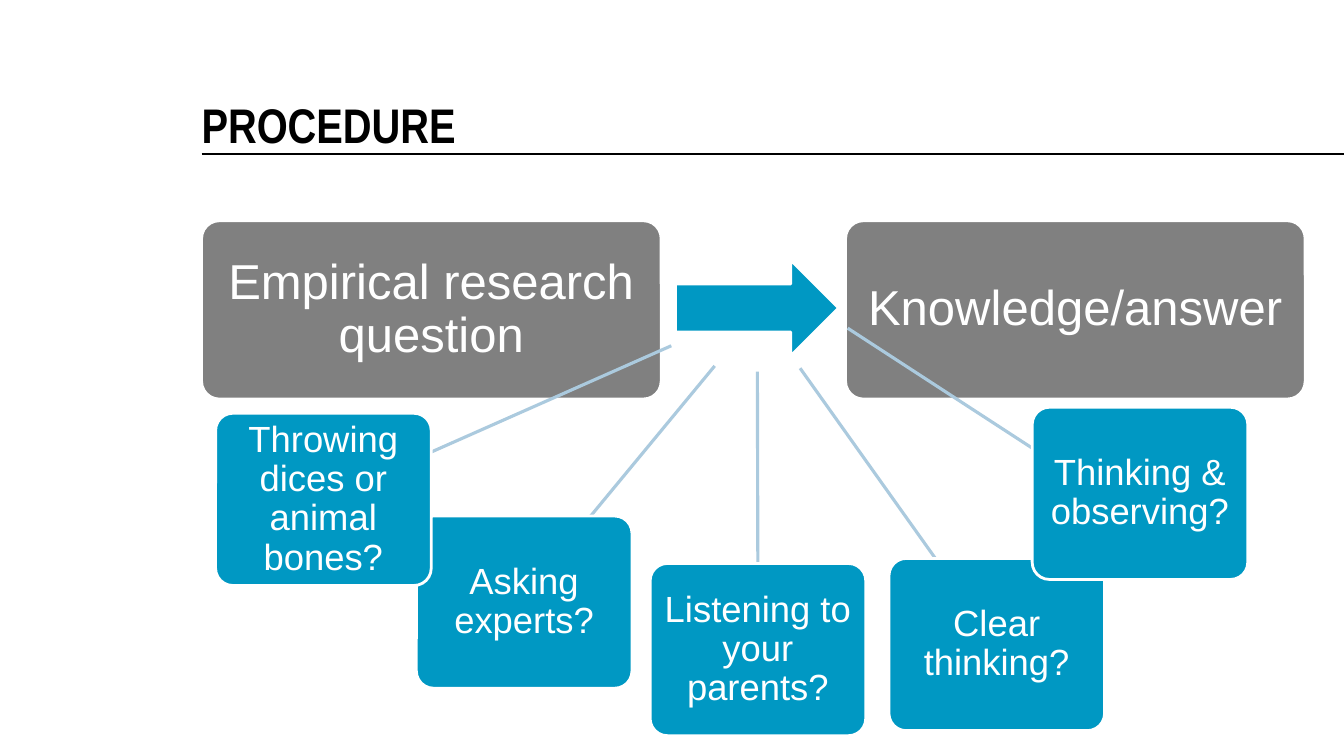
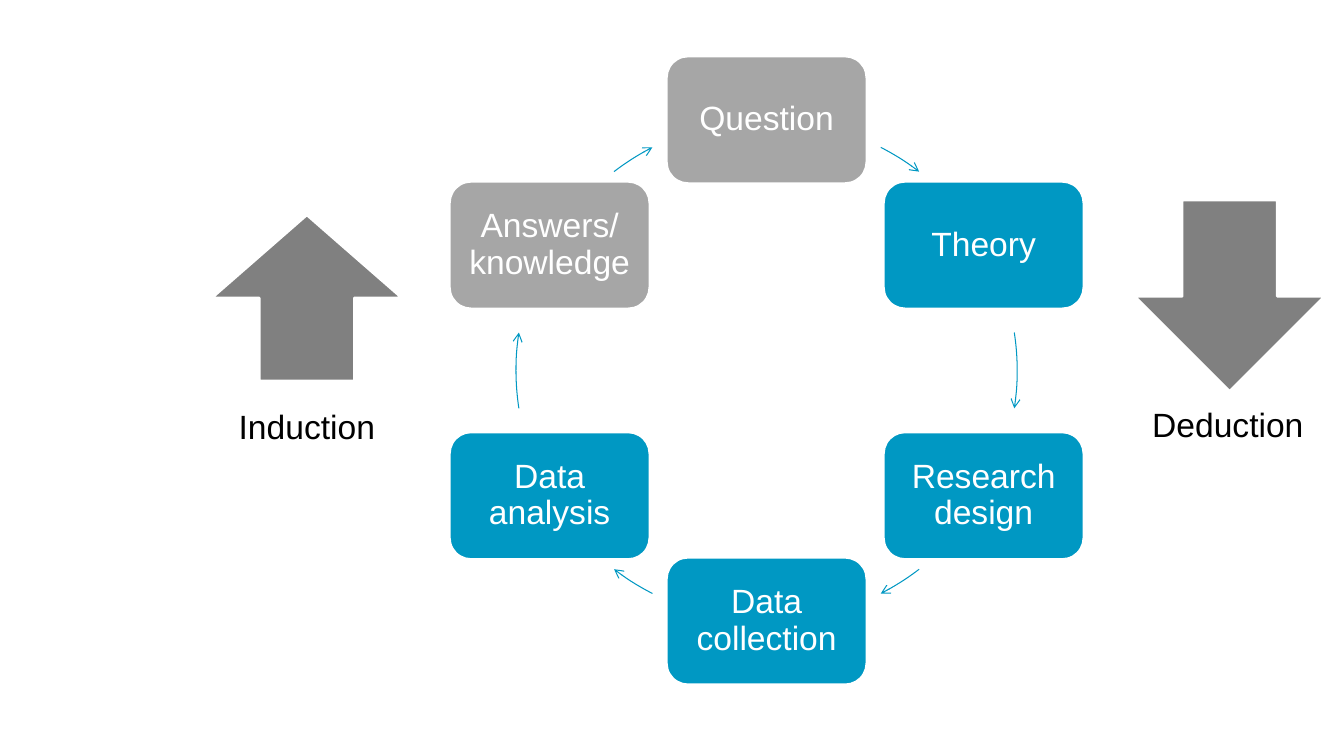
import math

from lxml import etree
from pptx import Presentation
from pptx.dml.color import RGBColor
from pptx.enum import shapes, text
from pptx.oxml import ns
from pptx.util import Pt

COLORS = {
    "black": "000000",
    "white": "FFFFFF",
    "blue": "0098C3",
    "pale": "ABCADE",
    "grey": "808080",
    "silver": "A6A6A6",
}
SHAPE = shapes.MSO_SHAPE


def rgb(name):
    return RGBColor.from_string(COLORS[name])


class Slides:
    """The shared style and the slide being drawn."""

    def __init__(self):
        self.deck = Presentation()
        self.deck.slide_width, self.deck.slide_height = Pt(960), Pt(540)
        self.page = None

    def new_page(self):
        self.page = self.deck.slides.add_slide(self.deck.slide_layouts[6])

    def set_text(self, box, words, size, color="white", inset=0):
        frame = box.text_frame
        frame.word_wrap = True
        frame.vertical_anchor = text.MSO_ANCHOR.MIDDLE
        frame.margin_left = frame.margin_right = Pt(inset)
        frame.margin_top = frame.margin_bottom = Pt(inset)
        frame.text = words
        para = frame.paragraphs[0]
        para.alignment = text.PP_ALIGN.CENTER
        para.line_spacing = 0.9
        font = para.runs[0].font
        font.name, font.size = "Arial", Pt(size)
        font.color.rgb = rgb(color)
        return para

    def label(self, words, left, top, width, height, size, color="black"):
        box = self.page.shapes.add_textbox(Pt(left), Pt(top), Pt(width), Pt(height))
        return box, self.set_text(box, words, size, color)

    def title(self, words):
        box, para = self.label(words, 144, 52, 786, 57.6, 34.7)
        box.text_frame.vertical_anchor = text.MSO_ANCHOR.BOTTOM
        para.alignment = text.PP_ALIGN.LEFT
        para.line_spacing = Pt(33.3)
        font = para.runs[0].font
        font.name, font.bold = "Arial Narrow", True
        self.line((144, 110), (960, 110), "black", 1)

    def line(self, start, end, color, width):
        rule = self.page.shapes.add_connector(
            shapes.MSO_CONNECTOR.STRAIGHT, *map(Pt, start + end))
        rule.line.color.rgb = rgb(color)
        rule.line.width = Pt(width)
        etree.SubElement(rule._element.spPr, ns.qn("a:effectLst"))

    def shape(self, kind, left, top, width, height, fill):
        shape = self.page.shapes.add_shape(kind, Pt(left), Pt(top), Pt(width), Pt(height))
        shape.shadow.inherit = False
        shape.fill.solid()
        shape.fill.fore_color.rgb = rgb(fill)
        shape.line.color.rgb = rgb("white")
        shape.line.width = Pt(2)
        return shape

    def card(self, words, left, top, width, height, fill, size, inset, corner):
        card = self.shape(SHAPE.ROUNDED_RECTANGLE, left, top, width, height, fill)
        card.adjustments[0] = corner
        self.set_text(card, words, size, inset=inset)

    def arc_arrow(self, center, radius, start, end):
        """Draw a clockwise arrow along a circle; angles are degrees from the right."""
        x, y = center
        arc = self.shape(SHAPE.ARC, x - radius, y - radius, 2 * radius, 2 * radius, "white")
        arc.fill.background()
        for index, angle in enumerate((start, end)):
            arc.adjustments[index] = angle % 360 * 0.6  # 60000 units per degree
        arc.line.color.rgb = rgb("blue")
        arc.line.width = Pt(0.75)
        outline = arc._element.spPr.find(ns.qn("a:ln"))
        etree.SubElement(outline, ns.qn("a:tailEnd"), type="arrow")


def draw_procedure(slides):
    slides.new_page()
    slides.title("PROCEDURE")
    for words, left in (("Empirical research question", 144), ("Knowledge/answer", 604)):
        slides.card(words, left, 157.7, 328.3, 127.4, "grey", 35, 10.8, 0.1)
    slides.shape(SHAPE.RIGHT_ARROW, 482.4, 185.8, 116.6, 68.4, "blue")

    # words, left, top, outer and inner end of the spoke
    methods = (
        ("Asking experts?", 297.4, 368.6, (510.5, 261.4), (372, 429)),
        ("Listening to your parents?", 464.4, 402.5, (541, 265.5), (541.5, 464)),
        ("Throwing dices or animal bones?", 154, 295.2, (479.5, 247), (231, 357)),
        ("Clear thinking?", 635, 398.9, (571.5, 263), (712, 460.5)),
        ("Thinking & observing?", 737.3, 290.9, (605.5, 234.4), (806.4, 365)),
    )
    for words, left, top, tip, end in methods:
        slides.line(tip, end, "pale", 2.25)
        slides.card(words, left, top, 154, 123, "blue", 26, 3.6, 0.1)


def draw_cycle(slides):
    slides.new_page()
    slides.shape(SHAPE.UP_ARROW, 151.2, 153.4, 136, 118.8, "grey")
    slides.label("Induction", 151.2, 272.2, 136, 67.7, 24)
    slides.shape(SHAPE.DOWN_ARROW, 810.4, 142.9, 136, 136.8, "grey")
    slides.label("Deduction", 809, 270.7, 136, 67.7, 24)

    center, radius = (547.6, 264.6), 179
    width, height = 143.3, 91.2
    steps = (
        ("Question", "silver"),
        ("Theory", "blue"),
        ("Research design", "blue"),
        ("Data collection", "blue"),
        ("Data analysis", "blue"),
        ("Answers/ knowledge", "silver"),
    )
    for index, (words, fill) in enumerate(steps):
        angle = math.radians(60 * index - 90)
        left = center[0] + radius * math.cos(angle) - width / 2
        top = center[1] + radius * math.sin(angle) - height / 2
        slides.card(words, left, top, width, height, fill, 24, 7.2, 0.17)

    for half_turn in (0, 180):
        for start, end in ((-62.9, -52.5), (-8.7, 8.7), (52.5, 62.9)):
            slides.arc_arrow(center, radius, start + half_turn, end + half_turn)


def main():
    slides = Slides()
    draw_procedure(slides)
    draw_cycle(slides)
    slides.deck.save("out.pptx")


if __name__ == "__main__":
    main()
